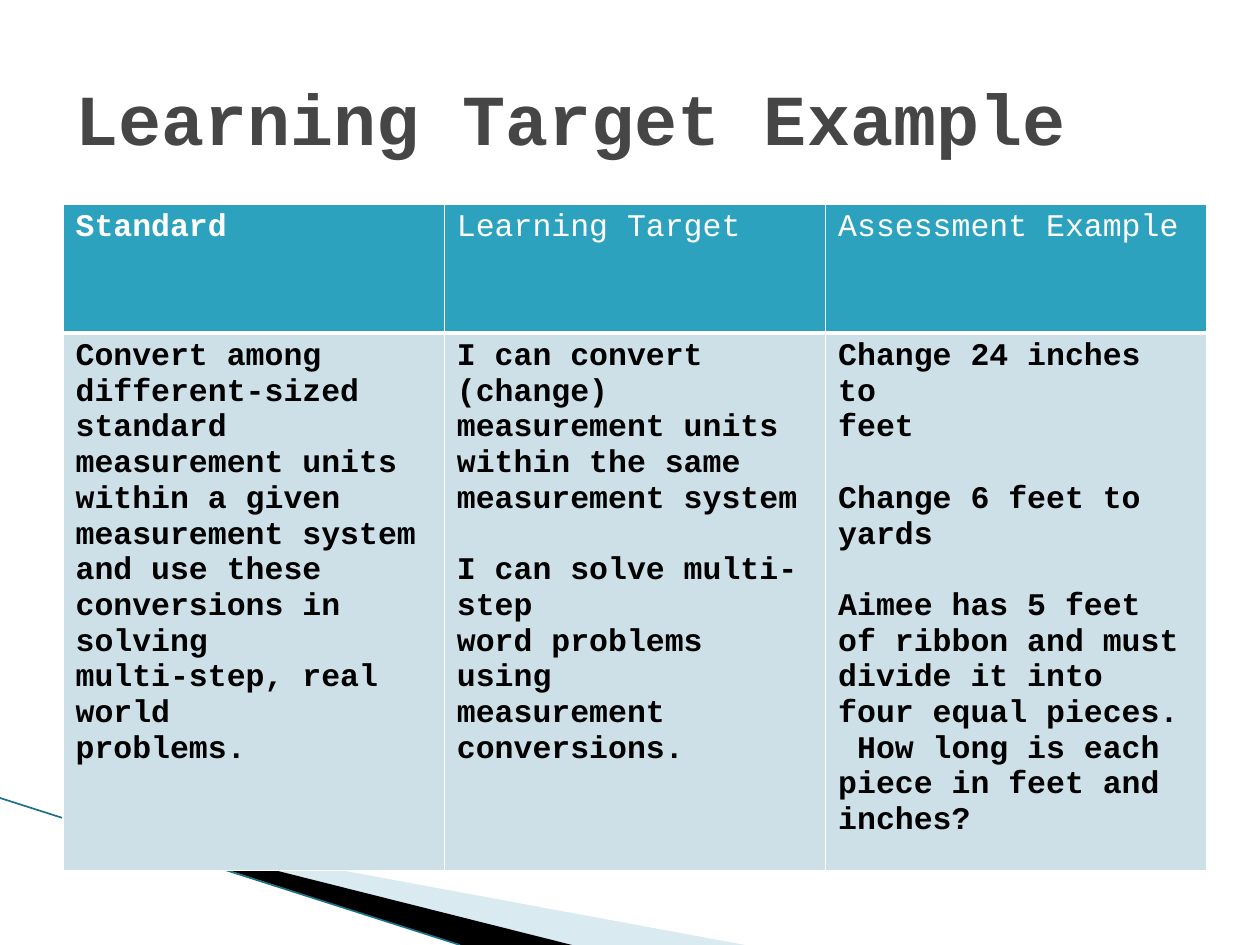
import dataclasses

import lxml.etree
import pptx
import pptx.dml.color
import pptx.enum.shapes
import pptx.enum.text
import pptx.oxml.ns
import pptx.util

SCALE = 914400 / 126  # EMU in one px


@dataclasses.dataclass(frozen=True)
class Theme:
    font: str = "Courier New"
    title_size: int = 41
    table_size: int = 18
    title: str = "464646"
    header: str = "2DA2BF"
    body: str = "CDE0E8"
    white: str = "FFFFFF"
    black: str = "000000"
    pale_wedge: str = "A0CBDC"
    edge: str = "1B7288"


THEME = Theme()
HEADINGS = ["Standard", "Learning Target", "Assessment Example"]
# Each column is a list of blocks, each block a list of paragraphs
COLUMNS = [
    [["Convert among", "different-sized standard", "measurement units",
      "within a given", "measurement system", "and use these",
      "conversions in solving", "multi-step, real world", "problems."]],
    [["I can convert (change)", "measurement units", "within the same",
      "measurement system"],
     ["I can solve multi-step", "word problems using", "measurement",
      "conversions."]],
    [["Change 24 inches to", "feet"],
     ["Change 6 feet to yards"],
     ["Aimee has 5 feet of ribbon and must divide it into four equal pieces.  "
      "How long is each piece in feet and inches?"]],
]


def px(length):
    return pptx.util.Emu(round(length * SCALE))


def rgb(code):
    return pptx.dml.color.RGBColor.from_string(code)


def add_xml(parent, tag, **attributes):
    return lxml.etree.SubElement(parent, pptx.oxml.ns.qn(tag), attributes)


def format_para(para, size, color, bold):
    for span in para.runs:
        span.font.name = THEME.font
        span.font.size = pptx.util.Pt(size)
        span.font.bold = bold
        span.font.color.rgb = rgb(color)


def add_wedge(page, left, top, points, color, opacity=100):
    start, *others = [(left + x, top + y) for x, y in points]
    builder = page.shapes.build_freeform(*start, scale=SCALE)
    builder.add_line_segments(others, close=True)
    wedge = builder.convert_to_shape()
    wedge.shadow.inherit = False
    wedge.line.fill.background()
    wedge.fill.solid()
    wedge.fill.fore_color.rgb = rgb(color)
    if opacity < 100:
        tint = wedge.fill._xPr.find(".//" + pptx.oxml.ns.qn("a:srgbClr"))
        add_xml(tint, "a:alpha", val=str(opacity * 1000))


def add_corner(page, left, top, width, height):
    # Pale and black wedges run from the table's corner to the bottom edge
    add_wedge(page, left, top, [(69, 22), (width, height), (572, height)],
              THEME.pale_wedge, opacity=40)
    add_wedge(page, left, top, [(67, 20), (572, height), (460, height)], THEME.black)
    # Thin edge line
    edge = page.shapes.add_connector(
        pptx.enum.shapes.MSO_CONNECTOR.STRAIGHT,
        px(left), px(top), px(left + 460), px(top + height))
    edge.line.color.rgb = rgb(THEME.edge)
    edge.line.width = pptx.util.Pt(0.95)
    add_xml(edge._element.spPr, "a:effectLst")


def add_title(page, left, top, width, height):
    box = page.shapes.add_textbox(px(left), px(top), px(width), px(height))
    frame = box.text_frame
    frame.word_wrap = True
    frame.vertical_anchor = pptx.enum.text.MSO_ANCHOR.MIDDLE
    frame.text = "Learning Target Example"
    format_para(frame.paragraphs[0], THEME.title_size, THEME.title, True)


def style_cell(cell, fill, bottom_width):
    properties = cell._tc.get_or_add_tcPr()
    for side, width in [("L", 1), ("R", 1), ("T", 1), ("B", bottom_width)]:
        border = add_xml(properties, "a:ln" + side, w=str(pptx.util.Pt(width)))
        add_xml(add_xml(border, "a:solidFill"), "a:srgbClr", val=THEME.white)
    cell.fill.solid()
    cell.fill.fore_color.rgb = rgb(fill)


def fill_body(cell, blocks):
    cell.text_frame.text = "\n".join(line for block in blocks for line in block)
    paras = iter(cell.text_frame.paragraphs)
    for block_number, block in enumerate(blocks):
        for line_number, para in zip(range(len(block)), paras):
            format_para(para, THEME.table_size, THEME.black, True)
            if block_number and line_number == 0:
                para.space_before = pptx.util.Pt(20.4)  # one line


def add_target_table(page, left, top, width, height):
    header_height = 129
    table = page.shapes.add_table(2, len(HEADINGS), px(left), px(top),
                                  px(width), px(height)).table
    table.rows[0].height = px(header_height)
    table.rows[1].height = px(height - header_height)
    for number, (heading, blocks) in enumerate(zip(HEADINGS, COLUMNS)):
        table.columns[number].width = px(width / len(HEADINGS))
        # Header cell; only the first heading is bold
        header = table.cell(0, number)
        header.text_frame.text = heading
        format_para(header.text_frame.paragraphs[0], THEME.table_size,
                    THEME.white, number == 0)
        style_cell(header, THEME.header, 3)
        # Body cell
        body = table.cell(1, number)
        fill_body(body, blocks)
        style_cell(body, THEME.body, 1)


def main():
    deck = pptx.Presentation()
    deck.slide_width, deck.slide_height = px(1260), px(945)
    page = deck.slides.add_slide(deck.slide_layouts[6])
    add_corner(page, 0, 798, 745, 147)
    add_title(page, 63, 38, 1134, 158)
    add_target_table(page, 63, 204, 1144, 635)
    deck.save("out.pptx")


if __name__ == "__main__":
    main()
